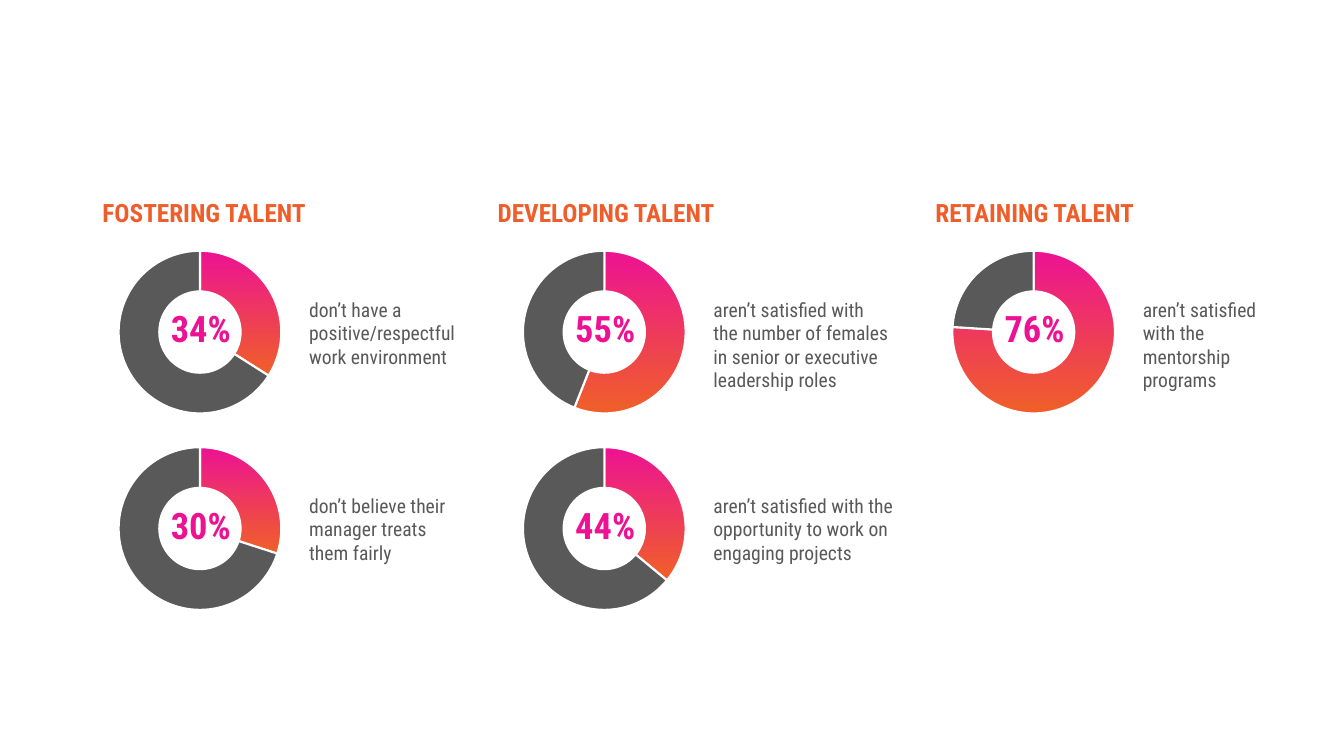
from copy import deepcopy

from lxml import etree
from pptx import Presentation
from pptx.chart.data import CategoryChartData
from pptx.dml.color import RGBColor
from pptx.enum.chart import XL_CHART_TYPE
from pptx.enum.text import MSO_AUTO_SIZE, PP_ALIGN
from pptx.oxml import parse_xml
from pptx.oxml.ns import nsdecls, qn
from pptx.util import Cm, Pt

PINK, ORANGE, GRAY, WHITE = "ED1293", "EF5E2A", "595959", "FFFFFF"

RING_TOP, RING_PITCH = 5.97, 4.95
RING_WIDTH, RING_HEIGHT = 5, 4.85
PLOT_AREA = {"x": 0.09, "y": 0.07, "w": 0.82, "h": 0.85}

# Heading, heading left, ring left, then (shown share, ring value, note, note width)
COLUMNS = [
    ("FOSTERING TALENT", 1.78, 2.54, [
        ("34%", 34, "don’t have a positive/respectful work environment", 4.37),
        ("30%", 30, "don’t believe their manager treats them fairly", 4.37),
    ]),
    ("DEVELOPING TALENT", 11.91, 12.73, [
        ("55%", 56, "aren’t satisfied with \nthe number of females \n"
                    "in senior or executive leadership roles", 5.46),
        ("44%", 36, "aren’t satisfied with the opportunity to work on "
                    "engaging projects", 5.08),
    ]),
    ("RETAINING TALENT", 22.71, 23.55, [
        ("76%", 76, "aren’t satisfied \nwith the mentorship programs", 4.37),
    ]),
]


def color(value):
    return RGBColor.from_string(value)


class TalentPage:
    """Holds the text styles and the slide being filled."""

    STYLES = {
        "heading": {"size": Pt(18), "bold": True, "color": ORANGE, "align": PP_ALIGN.CENTER},
        "share": {"size": Pt(26), "bold": True, "color": PINK, "align": PP_ALIGN.CENTER},
        "note": {"size": Pt(14), "bold": False, "color": GRAY, "align": PP_ALIGN.LEFT},
    }

    def __init__(self, deck):
        self.page = deck.slides.add_slide(deck.slide_layouts[6])

    def text(self, words, style, left, top, width, height):
        box = self.page.shapes.add_textbox(Cm(left), Cm(top), Cm(width), Cm(height))
        frame = box.text_frame
        frame.word_wrap = True
        frame.auto_size = MSO_AUTO_SIZE.SHAPE_TO_FIT_TEXT
        look = self.STYLES[style]
        para = frame.paragraphs[0]
        para.alignment = look["align"]
        para.text = words.replace("\n", "\v")
        for span in para.runs:
            font_format = {"name": "Roboto Condensed", "size": look["size"], "bold": look["bold"]}
            for key, value in font_format.items():
                setattr(span.font, key, value)
            span.font.color.rgb = color(look["color"])
        # Line breaks need the run size too, or they make their line taller
        run_format = para.runs[0].font._element
        for line_break in para._p.findall(qn("a:br")):
            line_break.append(deepcopy(run_format))

    def ring(self, value, left, top):
        data = CategoryChartData()
        data.categories = ["1", "2"]
        data.add_series("Series 1", (value, 100 - value))
        chart = self.page.shapes.add_chart(
            XL_CHART_TYPE.DOUGHNUT, Cm(left), Cm(top),
            Cm(RING_WIDTH), Cm(RING_HEIGHT), data).chart
        chart.has_legend = False
        chart.has_title = False
        for key, setting in {"name": "Calibri", "size": Pt(10)}.items():
            setattr(chart.font, key, setting)
        chart.font.color.rgb = color("000000")

        plot = chart.plots[0]
        plot.vary_by_categories = True
        plot.has_data_labels = False
        plot._element.find(qn("c:holeSize")).set("val", "74")
        points = [plot.series[0].points[index] for index in range(2)]
        for point in points:
            point.format.line.color.rgb = color(WHITE)
            point.format.line.width = Pt(1.5)
        fill = points[0].format.fill
        fill.gradient()
        fill.gradient_angle = 270
        for stop, place, hue in zip(fill.gradient_stops, (0, 0.97), (PINK, ORANGE)):
            stop.position = place
            stop.color.rgb = color(hue)
        rest = points[1].format.fill
        rest.solid()
        rest.fore_color.rgb = color(GRAY)
        self.place_plot(chart)

    def place_plot(self, chart):
        area = chart._chartSpace.find(".//" + qn("c:plotArea"))
        for old in area.findall(qn("c:layout")):
            area.remove(old)
        layout = parse_xml(f"<c:layout {nsdecls('c')}><c:manualLayout/></c:layout>")
        settings = {"layoutTarget": "inner", "xMode": "edge", "yMode": "edge", **PLOT_AREA}
        for key, value in settings.items():
            etree.SubElement(layout[0], qn("c:" + key)).set("val", str(value))
        area.insert(0, layout)

    def finding(self, share, value, note, note_width, left, top):
        """Draw one ring with its share in the middle and its note at the right."""
        lines = 4 if "\n" in note else 3
        self.text(note, "note", left + RING_WIDTH, top + 1.4, note_width, 0.25 + 0.6 * lines)
        self.ring(value, left, top)
        self.text(share, "share", left + 1.37, top + 1.63, 2.31, 1.37)


def main():
    deck = Presentation()
    deck.slide_width, deck.slide_height = Cm(33.87), Cm(19.05)
    talent = TalentPage(deck)
    for heading, heading_left, ring_left, findings in COLUMNS:
        talent.text(heading, "heading", heading_left, 4.85, 6.73, 1.02)
        for row, finding in enumerate(findings):
            talent.finding(*finding, ring_left, RING_TOP + row * RING_PITCH)
    deck.save("out.pptx")


if __name__ == "__main__":
    main()
